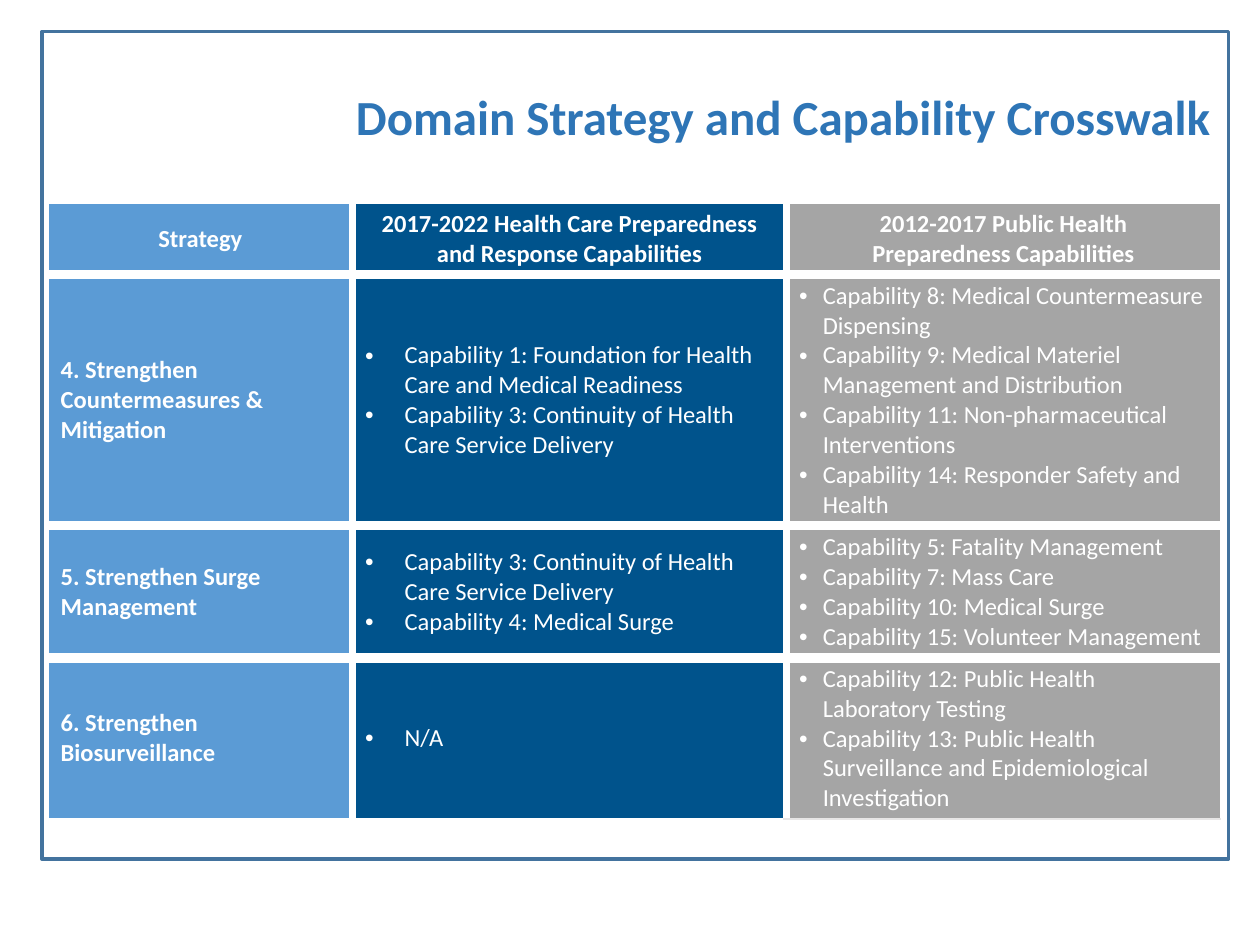
from lxml import etree
from pptx import Presentation
from pptx.dml.color import RGBColor
from pptx.enum.shapes import MSO_SHAPE
from pptx.enum.text import MSO_ANCHOR, PP_ALIGN
from pptx.oxml.ns import qn
from pptx.util import Pt

WHITE = RGBColor(0xFF, 0xFF, 0xFF)
FRAME_BLUE = RGBColor(0x43, 0x73, 0x9E)
TITLE_BLUE = RGBColor(0x2E, 0x75, 0xB6)
LIGHT_BLUE = RGBColor(0x5B, 0x9B, 0xD5)
DARK_BLUE = RGBColor(0x00, 0x53, 0x8C)
GRAY = RGBColor(0xA5, 0xA5, 0xA5)
PALE_GRAY = RGBColor(0xE7, 0xE6, 0xE6)

COLUMN_WIDTHS = (174, 248, 248)
ROW_HEIGHTS = (41, 143.5, 75.5, 92)
COLUMN_FILLS = (LIGHT_BLUE, DARK_BLUE, GRAY)
BULLET_INDENTS = (0, 22.5, 13.5)
OUTER_BORDER, COLUMN_GAP, ROW_GAP = 1, 4.5, 6

# Each cell is a list of paragraphs
CROSSWALK = [
    (["Strategy"],
     ["2017-2022 Health Care Preparedness and Response Capabilities"],
     ["2012-2017 Public Health", "Preparedness Capabilities"]),
    (["4. Strengthen Countermeasures & Mitigation"],
     ["Capability 1: Foundation for Health Care and Medical Readiness",
      "Capability 3: Continuity of Health Care Service Delivery"],
     ["Capability 8: Medical Countermeasure Dispensing",
      "Capability 9: Medical Materiel Management and Distribution",
      "Capability 11: Non-pharmaceutical Interventions",
      "Capability 14: Responder Safety and Health"]),
    (["5. Strengthen Surge Management"],
     ["Capability 3: Continuity of Health Care Service Delivery",
      "Capability 4: Medical Surge"],
     ["Capability 5: Fatality Management",
      "Capability 7: Mass Care",
      "Capability 10: Medical Surge",
      "Capability 15: Volunteer Management"]),
    (["6. Strengthen Biosurveillance"],
     ["N/A"],
     ["Capability 12: Public Health Laboratory Testing",
      "Capability 13: Public Health Surveillance and Epidemiological Investigation"]),
]


class SlideBuilder:
    """Holds the text style and the current slide."""

    font_name = "Calibri"

    def __init__(self, slide):
        self.slide = slide

    def style(self, para, size, color, bold, align):
        para.alignment = align
        para.font.name = self.font_name
        para.font.size = Pt(size)
        para.font.bold = bold
        para.font.color.rgb = color

    def frame(self, left, top, width, height, color, weight):
        box = self.slide.shapes.add_shape(
            MSO_SHAPE.RECTANGLE, Pt(left), Pt(top), Pt(width), Pt(height))
        box.shadow.inherit = False
        box.fill.background()
        box.line.color.rgb = color
        box.line.width = Pt(weight)

    def title(self, text, left, top, width, height):
        box = self.slide.shapes.add_textbox(Pt(left), Pt(top), Pt(width), Pt(height))
        box.text_frame.word_wrap = True
        box.text_frame.vertical_anchor = MSO_ANCHOR.MIDDLE
        para = box.text_frame.paragraphs[0]
        para.text = text
        self.style(para, 28, TITLE_BLUE, True, PP_ALIGN.RIGHT)

    def bullet(self, para, indent):
        properties = para._p.get_or_add_pPr()
        properties.set("marL", str(Pt(indent)))
        properties.set("indent", str(-Pt(indent)))
        etree.SubElement(properties, qn("a:buFont"), typeface="Arial")
        etree.SubElement(properties, qn("a:buChar"), char="•")

    def borders(self, cell, sides):
        """Draw (tag, weight, color) borders, which precede the cell's fill."""
        properties = cell._tc.get_or_add_tcPr()
        for position, (tag, weight, color) in enumerate(sides):
            line = etree.Element(qn(f"a:{tag}"), w=str(Pt(weight)))
            fill = etree.SubElement(line, qn("a:solidFill"))
            etree.SubElement(fill, qn("a:srgbClr"), val=str(color))
            properties.insert(position, line)

    def cell(self, cell, lines, fill, header, indent):
        cell.fill.solid()
        cell.fill.fore_color.rgb = fill
        cell.vertical_anchor = MSO_ANCHOR.MIDDLE
        cell.text_frame.text = "\n".join(lines)
        bulleted = indent > 0 and not header
        for para in cell.text_frame.paragraphs:
            if bulleted:
                self.bullet(para, indent)
            self.style(para, 14, WHITE, not bulleted,
                       PP_ALIGN.CENTER if header else PP_ALIGN.LEFT)

    def table(self, rows, left, top):
        table = self.slide.shapes.add_table(
            len(rows), len(COLUMN_WIDTHS), Pt(left), Pt(top),
            Pt(sum(COLUMN_WIDTHS)), Pt(sum(ROW_HEIGHTS))).table
        for column, width in zip(table.columns, COLUMN_WIDTHS):
            column.width = Pt(width)
        for row, height in zip(table.rows, ROW_HEIGHTS):
            row.height = Pt(height)
        last_row, last_column = len(rows) - 1, len(COLUMN_WIDTHS) - 1
        for r, row in enumerate(rows):
            for c, lines in enumerate(row):
                cell = table.cell(r, c)
                self.cell(cell, lines, COLUMN_FILLS[c], r == 0, BULLET_INDENTS[c])
                corner = r == last_row and c == last_column
                self.borders(cell, [
                    ("lnL", COLUMN_GAP if c else OUTER_BORDER, WHITE),
                    ("lnR", COLUMN_GAP if c < last_column else OUTER_BORDER, WHITE),
                    ("lnT", ROW_GAP if r else OUTER_BORDER, WHITE),
                    ("lnB", ROW_GAP if r < last_row else OUTER_BORDER,
                     PALE_GRAY if corner else WHITE),
                ])


def main():
    deck = Presentation()
    deck.slide_width, deck.slide_height = Pt(720), Pt(540)
    page = SlideBuilder(deck.slides.add_slide(deck.slide_layouts[6]))

    # Border and title
    page.frame(24, 18, 678, 473, FRAME_BLUE, 2)
    page.title("Domain Strategy and Capability Crosswalk", 27.5, 30.5, 671, 71)

    # Crosswalk table
    page.table(CROSSWALK, 27.5, 116)

    deck.save("out.pptx")


if __name__ == "__main__":
    main()
